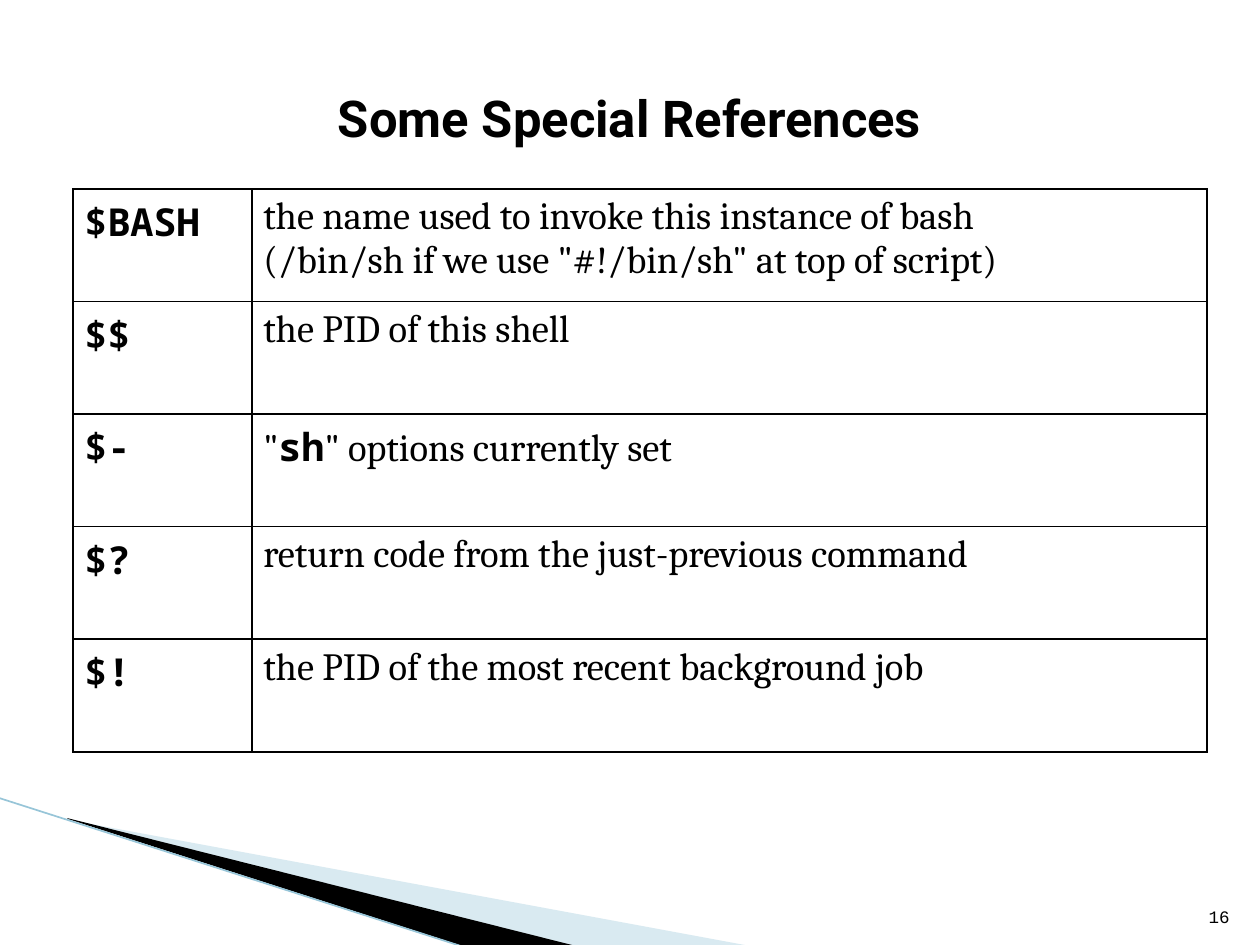
from lxml.etree import SubElement
from pptx import Presentation
from pptx.dml.color import RGBColor
from pptx.enum.shapes import MSO_CONNECTOR
from pptx.enum.text import MSO_ANCHOR, PP_ALIGN
from pptx.oxml.ns import qn
from pptx.util import Emu, Inches, Pt

BLACK = RGBColor(0x00, 0x00, 0x00)
PALE = RGBColor(0xA0, 0xCB, 0xDC)
EDGE = RGBColor(0x97, 0xC5, 0xD8)
HEAD, BODY, CODE, NUMBER = "Roboto", "Cambria", "Noto Sans Mono", "Courier New"

ROWS = [
    ("$BASH", [["the name used to invoke this instance of bash"],
               ['(/bin/sh if we use "#!/bin/sh" at top of script)']]),
    ("$$", [["the PID of this shell"]]),
    ("$-", [['"', ("sh", CODE), '" options currently set']]),
    ("$?", [["return code from the just-previous command"]]),
    ("$!", [["the PID of the most recent background job"]]),
]


def px(count):
    return Emu(round(count * 914400 / 126))


def write(para, text, face=BODY, size=22, bold=False, color=BLACK):
    run = para.add_run()
    run.text = text
    font = run.font
    font.name, font.size, font.bold = face, Pt(size), bold
    font.color.rgb = color


class Deck:
    """Builds one slide in a fixed style, measured in px."""

    def __init__(self, width, height):
        self.file = Presentation()
        self.file.slide_width, self.file.slide_height = px(width), px(height)
        self.slide = self.file.slides.add_slide(self.file.slide_layouts[6])
        self.shapes = self.slide.shapes

    def wedge(self, points, color, alpha=None):
        start, *rest = [(px(x), px(y)) for x, y in points]
        path = self.shapes.build_freeform(*start)
        path.add_line_segments(rest)
        shape = path.convert_to_shape()
        shape.shadow.inherit = False
        shape.line.fill.background()
        shape.fill.solid()
        shape.fill.fore_color.rgb = color
        if alpha:
            tint = shape.fill._xPr.find(".//" + qn("a:srgbClr"))
            SubElement(tint, qn("a:alpha"), val=str(alpha * 1000))

    def line(self, start, end, color, width):
        ends = [px(n) for n in (*start, *end)]
        line = self.shapes.add_connector(MSO_CONNECTOR.STRAIGHT, *ends)
        line.line.color.rgb = color
        line.line.width = Pt(width)
        SubElement(line._element.spPr, qn("a:effectLst"))

    def text(self, box, text, align, anchor, **style):
        frame = self.shapes.add_textbox(*[px(n) for n in box]).text_frame
        frame.word_wrap = True
        frame.vertical_anchor = anchor
        para = frame.paragraphs[0]
        para.alignment = align
        write(para, text, **style)

    def cell(self, cell, lines):
        cell.margin_left = cell.margin_right = Inches(0.09)
        cell.margin_top = cell.margin_bottom = Inches(0.05)
        props = cell._tc.get_or_add_tcPr()
        for side in ("lnL", "lnR", "lnT", "lnB"):
            edge = SubElement(props, qn("a:" + side), w=str(Pt(1)))
            fill = SubElement(edge, qn("a:solidFill"))
            SubElement(fill, qn("a:srgbClr"), val=str(BLACK))
        cell.fill.background()
        frame = cell.text_frame
        for i, parts in enumerate(lines):
            para = frame.add_paragraph() if i else frame.paragraphs[0]
            tabs = SubElement(para._p.get_or_add_pPr(), qn("a:tabLst"))
            for stop in range(8):
                SubElement(tabs, qn("a:tab"), pos=str(Inches(0.38 + stop)), algn="l")
            para.line_spacing = 0.98
            for part in parts:
                if isinstance(part, tuple):
                    write(para, part[0], face=part[1], bold=True)
                else:
                    write(para, part)

    def table(self, box, widths, rows):
        frame = self.shapes.add_table(len(rows), len(widths), *[px(n) for n in box])
        table = frame.table
        table.first_row = table.horz_banding = False
        for col, width in zip(table.columns, widths):
            col.width = px(width)
        for row, (name, lines) in zip(table.rows, rows):
            self.cell(row.cells[0], [[(name, CODE)]])
            self.cell(row.cells[1], lines)


def main():
    deck = Deck(1260, 945)
    deck.wedge([(69, 820), (750, 946), (575, 946), (69, 819)], PALE, alpha=40)
    deck.wedge([(67, 818), (576, 946), (469, 948), (68, 819)], BLACK)
    deck.line((-1, 798), (467, 948), EDGE, 0.95)
    deck.text((63, 38, 1134, 158), "Some Special References",
              PP_ALIGN.CENTER, MSO_ANCHOR.MIDDLE, face=HEAD, size=29, bold=True)
    deck.table((73, 189, 1134, 563), (179, 955), ROWS)
    deck.text((1192, 883, 50, 50), "16",
              PP_ALIGN.RIGHT, MSO_ANCHOR.BOTTOM, face=NUMBER, size=10)
    deck.file.save("out.pptx")


if __name__ == "__main__":
    main()
